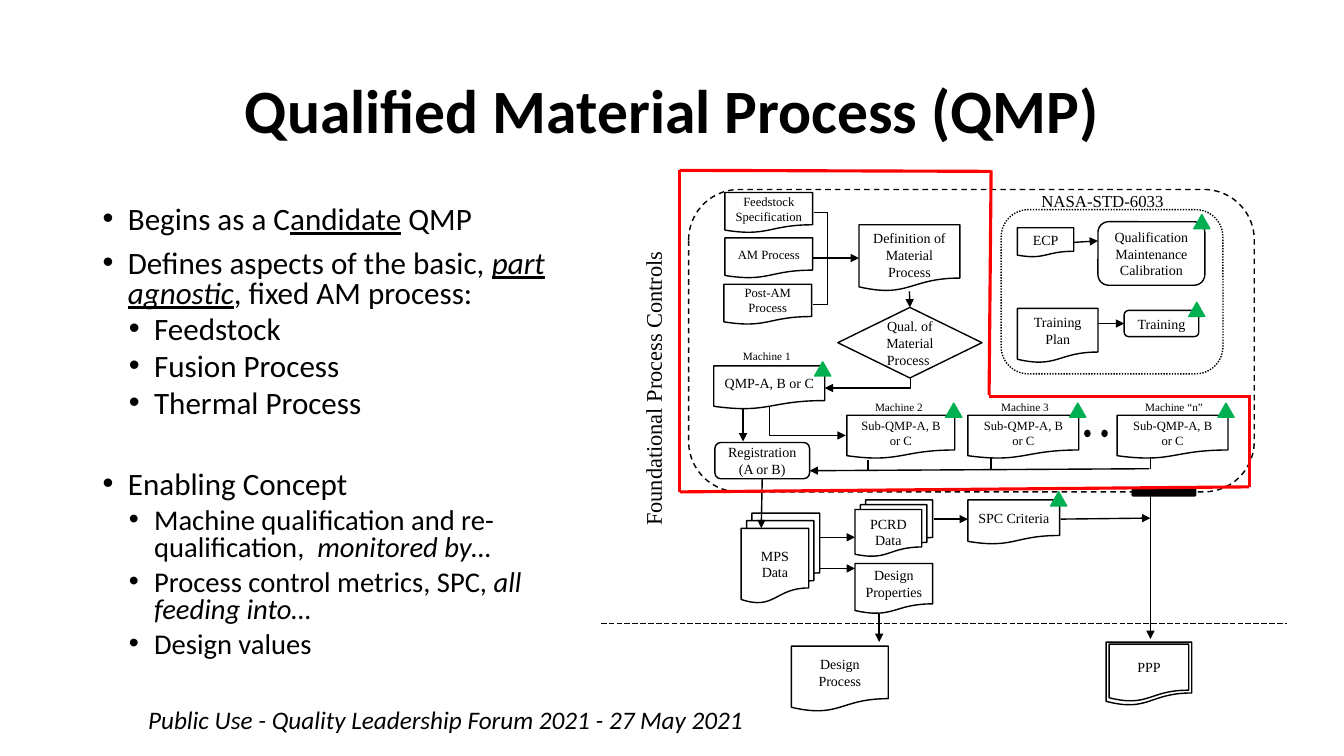
from lxml.etree import SubElement
from pptx import Presentation
from pptx.dml.color import RGBColor
from pptx.enum.dml import MSO_LINE
from pptx.enum.shapes import MSO_CONNECTOR, MSO_SHAPE
from pptx.enum.text import MSO_ANCHOR, MSO_AUTO_SIZE, PP_ALIGN
from pptx.oxml.ns import qn
from pptx.util import Pt

PX = 9144  # 100 px to the inch
BLACK, GREEN, RED = "000000", "00B050", "FF0000"
SERIF, SANS = "Times New Roman", "Calibri"
DOCUMENT = MSO_SHAPE.FLOWCHART_DOCUMENT
STACK = MSO_SHAPE.FLOWCHART_MULTIDOCUMENT
ROUNDED = MSO_SHAPE.FLOWCHART_ALTERNATE_PROCESS
TOP, LEFT, BOTTOM, RIGHT = range(4)


def color(value):
    return RGBColor.from_string(value)


def style_text(text_frame, font_name, size, align=PP_ALIGN.LEFT):
    for paragraph in text_frame.paragraphs:
        paragraph.alignment = align
        for run in paragraph.runs:
            run.font.name = font_name
            run.font.size = Pt(size)
            run.font.color.rgb = color(BLACK)


presentation = Presentation()
presentation.slide_width, presentation.slide_height = 1333 * PX, 750 * PX
slide = presentation.slides.add_slide(presentation.slide_layouts[6])
shapes = slide.shapes

# Title
title = shapes.add_textbox(92 * PX, 40 * PX, 1150 * PX, 145 * PX).text_frame
title.word_wrap = True
title.vertical_anchor = MSO_ANCHOR.MIDDLE
title.text = "Qualified Material Process (QMP)"
style_text(title, SANS, 44, PP_ALIGN.CENTER)
title.paragraphs[0].line_spacing = 0.9
title.paragraphs[0].runs[0].font.bold = True

# Bullets: level, size, space before, runs of (text, i = italic / u = underline)
bullets = [
    (0, 22.2, 0, [("Begins as a C", ""), ("andidate", "u"), (" QMP", "")]),
    (0, 22.2, 10, [("Defines aspects of the basic, ", ""), ("part agnostic", "iu"),
                   (", fixed AM process:", "")]),
    (1, 22.2, 5, [("Feedstock", "")]),
    (1, 22.2, 5, [("Fusion Process", "")]),
    (1, 22.2, 5, [("Thermal Process", "")]),
    (0, 22.2, 36.5, [("Enabling Concept", "")]),
    (1, 20.4, 5, [("Machine qualification and re-qualification,  ", ""), ("monitored by…", "i")]),
    (1, 20.4, 5, [("Process control metrics, SPC, ", ""), ("all feeding into…", "i")]),
    (1, 20.4, 5, [("Design values", "")]),
]
body = shapes.add_textbox(92 * PX, 200 * PX, 505 * PX, 476 * PX).text_frame
body.word_wrap = True
for index, (level, size, space, runs) in enumerate(bullets):
    paragraph = body.add_paragraph() if index else body.paragraphs[0]
    paragraph.level = level
    paragraph.line_spacing = 0.8
    paragraph.space_before = Pt(space)
    properties = paragraph._p.get_or_add_pPr()
    properties.set("marL", str((25 + 26 * level) * PX))
    properties.set("indent", str(-25 * PX))
    SubElement(properties, qn("a:buFont")).set("typeface", "Arial")
    SubElement(properties, qn("a:buChar")).set("char", "•")
    for text, marks in runs:
        run = paragraph.add_run()
        run.text = text
        run.font.name = SANS
        run.font.size = Pt(size)
        run.font.color.rgb = color(BLACK)
        run.font.italic = "i" in marks
        run.font.underline = "u" in marks

# Flow chart boxes: name, kind, left, top, width, height, text, size
boxes = [
    ("sub n", DOCUMENT, 1108, 412, 110, 43, "Sub-QMP-A, B or C", 9),
    ("sub 3", DOCUMENT, 960, 412, 110, 43, "Sub-QMP-A, B or C", 9),
    ("sub 2", DOCUMENT, 840, 412, 107, 43, "Sub-QMP-A, B or C", 9),
    ("mps", STACK, 735, 509, 78, 89, "MPS\nData", 10),
    ("spc", DOCUMENT, 960, 496, 91, 44, "SPC Criteria", 10),
    ("pcrd", STACK, 848, 496, 77, 56, "PCRD\nData", 10),
    ("properties", DOCUMENT, 848, 559, 77, 50, "Design\nProperties", 10),
    ("ppp", DOCUMENT, 1100, 639, 79, 57, "PPP", 10),
    ("ppp border", DOCUMENT, 1097, 637, 85, 63, "", 10),
    ("design", DOCUMENT, 785, 641, 96, 65, "Design Process", 10),
    ("ecp", DOCUMENT, 1009, 226, 56, 29, "ECP", 10),
    ("qualification", ROUNDED, 1089, 220, 106, 63, "Qualification Maintenance Calibration", 10),
    ("plan", DOCUMENT, 1009, 306, 80, 54, "Training Plan", 10),
    ("training", ROUNDED, 1115, 308, 74, 26, "Training", 10),
    ("definition", DOCUMENT, 852, 223, 100, 66, "Definition of\nMaterial Process", 10),
    ("decision", MSO_SHAPE.FLOWCHART_DECISION, 831, 305, 143, 70, "Qual. of Material Process ", 10),
    ("feedstock", DOCUMENT, 719, 191, 87, 40, "Feedstock\nSpecification", 9),
    ("am", DOCUMENT, 719, 236, 87, 40, "AM Process", 9),
    ("post-am", DOCUMENT, 718, 282, 87, 40, "Post-AM Process", 9),
    ("qmp", DOCUMENT, 708, 363, 110, 43, "QMP-A, B or C", 10),
    ("registration", ROUNDED, 709, 439, 94, 36, "Registration\n(A or B)", 10),
    ("standard frame", MSO_SHAPE.ROUNDED_RECTANGLE, 993, 208, 220, 163, "", 10),
    ("controls frame", ROUNDED, 683, 188, 561, 300, "", 10),
]
box_shapes = {}
for name, kind, left, top, width, height, text, size in boxes:
    box = shapes.add_shape(kind, left * PX, top * PX, width * PX, height * PX)
    box.shadow.inherit = False
    box.fill.background()
    box.line.color.rgb = color(BLACK)
    box.line.width = Pt(1)
    if text:
        frame = box.text_frame
        frame.word_wrap = True
        frame.margin_left = frame.margin_right = 9 * PX
        frame.vertical_anchor = MSO_ANCHOR.MIDDLE
        frame.text = text
        style_text(frame, SERIF, size, PP_ALIGN.CENTER)
    box_shapes[name] = box
box_shapes["definition"].text_frame.vertical_anchor = MSO_ANCHOR.TOP
box_shapes["standard frame"].line.dash_style = MSO_LINE.ROUND_DOT
box_shapes["controls frame"].line.dash_style = MSO_LINE.DASH

# Solid markers: green triangles, dots between machines, bar above the PPP arrow
markers = [(MSO_SHAPE.ISOSCELES_TRIANGLE, left, top, 16, 14, GREEN) for left, top in [
    (1042, 488), (1179, 300), (1184, 213), (1061, 400), (1208, 400), (808, 359), (938, 400)]]
markers += [(MSO_SHAPE.OVAL, left, 427, 5, 6, BLACK) for left in (1076, 1093)]
markers.append((MSO_SHAPE.ROUNDED_RECTANGLE, 1123, 484, 63, 8, BLACK))
for kind, left, top, width, height, fill in markers:
    marker = shapes.add_shape(kind, left * PX, top * PX, width * PX, height * PX)
    marker.shadow.inherit = False
    marker.fill.solid()
    marker.fill.fore_color.rgb = color(fill)
    marker.line.color.rgb = color(fill)
    marker.line.width = Pt(1)

# Lines: ends, color, width, arrow end, preset geometry, joined begin, joined end
arrows = [
    (872, 609, 872, 637), (1141, 485, 1141, 634), (1052, 515, 1141, 514),
    (926, 515, 960, 515), (813, 533, 848, 533), (813, 564, 848, 564),
    (737, 405, 737, 438), (1140, 465, 803, 467),
]
joined_arrows = [
    ((1066, 240, 1089, 239), ("ecp", RIGHT), None),
    ((1089, 321, 1116, 320), None, ("training", LEFT)),
    ((806, 256, 852, 256), ("am", RIGHT), ("definition", LEFT)),
    ((902, 285, 903, 305), ("definition", BOTTOM), ("decision", TOP)),
    ((756, 475, 755, 524), ("registration", BOTTOM), None),
]
elbows = [
    ((806, 302, 807, 211), None, "bentConnector3"),
    ((818, 385, 903, 375), "headEnd", "bentConnector2"),
    ((839, 432, 763, 403), "headEnd", "bentConnector2"),
]
stubs = [(1141, 465, 1141, 453), (983, 465, 983, 453), (861, 467, 861, 456)]
outline = [
    (674, 169, 674, 488), (674, 488, 1239, 483), (674, 169, 983, 170),
    (983, 169, 981, 392), (1239, 483, 1239, 393), (1241, 393, 981, 393),
]
lines = [((596, 618, 1276, 618), BLACK, 0.5, None, "line", None, None)]
lines += [(ends, BLACK, 1, "tailEnd", "line", None, None) for ends in arrows]
lines += [(ends, BLACK, 1, "tailEnd", "line", begin, end) for ends, begin, end in joined_arrows]
lines += [(ends, BLACK, 1, arrow, preset, None, None) for ends, arrow, preset in elbows]
lines += [(ends, BLACK, 1, None, "line", None, None) for ends in stubs]
lines += [(ends, RED, 2.25, None, "line", None, None) for ends in outline]
for ends, line_color, width, arrow, preset, begin, end in lines:
    kind = MSO_CONNECTOR.STRAIGHT if preset == "line" else MSO_CONNECTOR.ELBOW
    connector = shapes.add_connector(kind, *[value * PX for value in ends])
    if begin:
        connector.begin_connect(box_shapes[begin[0]], begin[1])
    if end:
        connector.end_connect(box_shapes[end[0]], end[1])
    connector.line.color.rgb = color(line_color)
    connector.line.width = Pt(width)
    if width == 0.5:
        connector.line.dash_style = MSO_LINE.LONG_DASH
    properties = connector.element.spPr
    if arrow:
        SubElement(properties.find(qn("a:ln")), qn("a:" + arrow)).set("type", "triangle")
    SubElement(properties, qn("a:effectLst"))
    geometry = properties.find(qn("a:prstGeom"))
    geometry.set("prst", preset)
    if preset == "bentConnector3":
        guide = SubElement(geometry.find(qn("a:avLst")), qn("a:gd"))
        guide.set("name", "adj1")
        guide.set("fmla", "val 1500000")

# Labels: left, top, width, height, text, font, size, rotation
labels = [
    (500, 365, 296, 37, "Foundational Process Controls", SERIF, 16, 270),
    (858, 392, 68, 24, "Machine 2", SERIF, 8, 0),
    (983, 392, 68, 24, "Machine 3", SERIF, 8, 0),
    (1126, 392, 78, 24, "Machine “n”", SERIF, 8, 0),
    (727, 342, 68, 24, "Machine 1", SERIF, 8, 0),
    (1023, 184, 142, 30, "NASA-STD-6033", SERIF, 12, 0),
    (137, 694, 611, 40, "Public Use - Quality Leadership Forum 2021 - 27 May 2021", SANS, 18, 0),
]
for left, top, width, height, text, font_name, size, rotation in labels:
    label = shapes.add_textbox(left * PX, top * PX, width * PX, height * PX)
    label.rotation = rotation
    label.text_frame.word_wrap = False
    label.text_frame.auto_size = MSO_AUTO_SIZE.SHAPE_TO_FIT_TEXT
    label.text_frame.text = text
    style_text(label.text_frame, font_name, size)
    label.text_frame.paragraphs[0].runs[0].font.italic = font_name == SANS

presentation.save("out.pptx")
